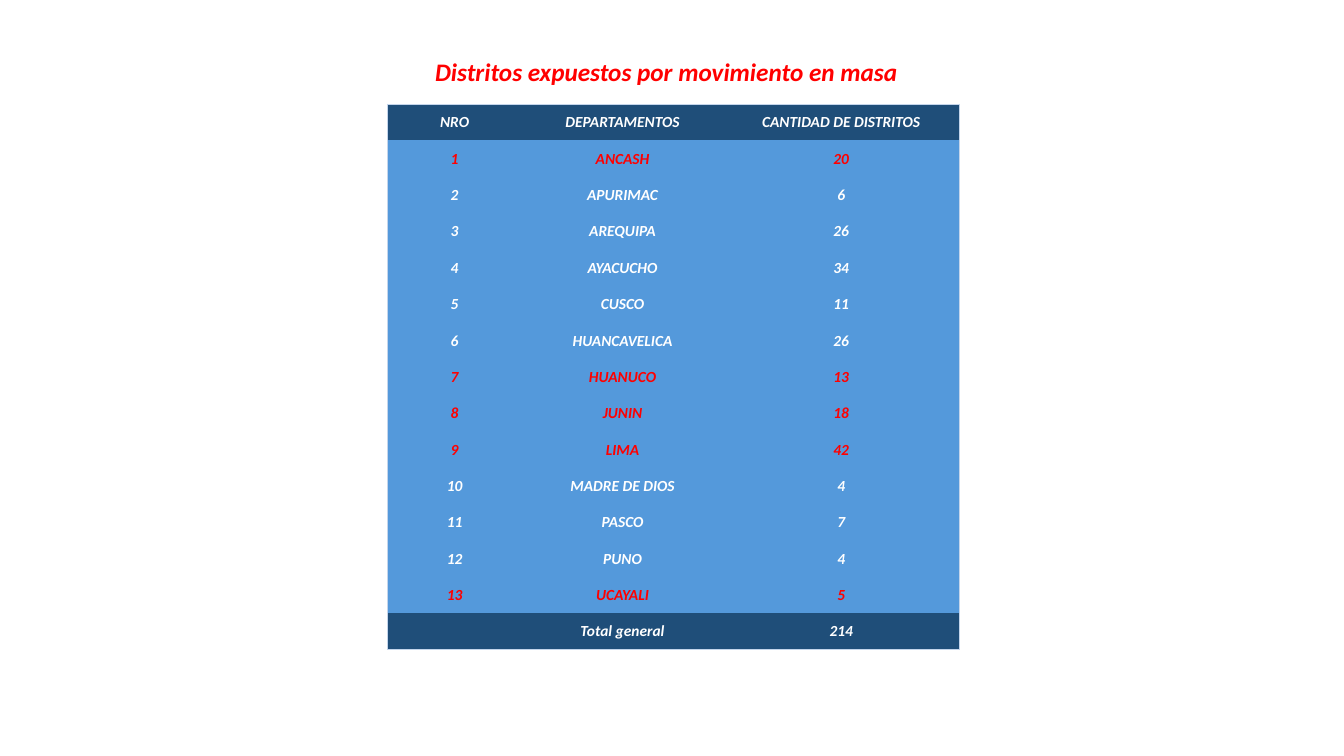
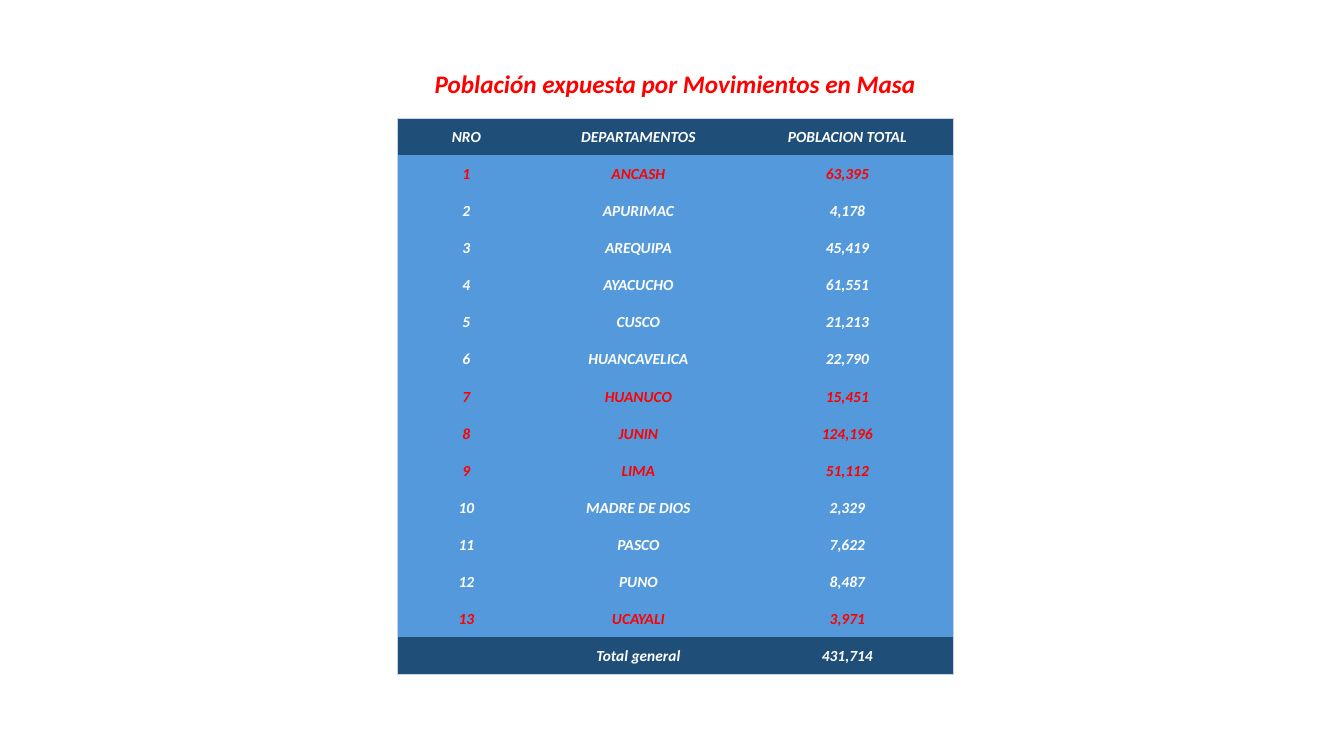
from lxml.etree import SubElement
from pptx import Presentation
from pptx.dml.color import RGBColor
from pptx.enum.text import MSO_ANCHOR, MSO_AUTO_SIZE, PP_ALIGN
from pptx.oxml.ns import qn
from pptx.util import Inches, Pt

SLIDE_WIDTH, SLIDE_HEIGHT = Inches(13.33), Inches(7.5)
FONT = "Calibri"
RED = RGBColor(0xFF, 0x00, 0x00)
WHITE = RGBColor(0xFF, 0xFF, 0xFF)
NAVY = RGBColor(0x1F, 0x4E, 0x79)
BLUE = RGBColor(0x54, 0x99, 0xDB)
FRAME = RGBColor(0xC4, 0xD5, 0xEB)

DEPARTMENTS = [
    "ANCASH", "APURIMAC", "AREQUIPA", "AYACUCHO", "CUSCO", "HUANCAVELICA", "HUANUCO",
    "JUNIN", "LIMA", "MADRE DE DIOS", "PASCO", "PUNO", "UCAYALI",
]
HIGHLIGHTED = {"ANCASH", "HUANUCO", "JUNIN", "LIMA", "UCAYALI"}

# Positions and sizes are percentages of the slide's width or height.
SLIDES = [
    {
        "title": "Distritos expuestos por movimiento en masa",
        "title_box": (31.2, 6.8, 36.75, 5.33),
        "table_corner": (28.8, 13.75),
        "columns": (10.05, 14.95, 17.6),
        "row": 4.81,
        "heading": "CANTIDAD DE DISTRITOS",
        "values": ["20", "6", "26", "34", "11", "26", "13", "18", "42", "4", "7", "4", "5"],
        "total": "214",
    },
    {
        "title": "Población expuesta por Movimientos en Masa",
        "title_box": (31.35, 8.4, 37.75, 5.33),
        "table_corner": (29.55, 15.6),
        "columns": (10.3, 15.3, 15.8),
        "row": 4.91,
        "heading": "POBLACION TOTAL",
        "values": ["63,395", "4,178", "45,419", "61,551", "21,213", "22,790", "15,451",
                   "124,196", "51,112", "2,329", "7,622", "8,487", "3,971"],
        "total": "431,714",
    },
]


def across(percent):
    return round(SLIDE_WIDTH * percent / 100)


def down(percent):
    return round(SLIDE_HEIGHT * percent / 100)


def write_text(text_frame, text, *, size, color, align=PP_ALIGN.CENTER):
    paragraph = text_frame.paragraphs[0]
    paragraph.alignment = align
    if not text:
        return
    run = paragraph.add_run()
    run.text = text
    font = run.font
    font.name, font.size = FONT, Pt(size)
    font.bold = font.italic = True
    font.color.rgb = color


def add_title(slide, text, box):
    left, top, width, height = box
    shape = slide.shapes.add_textbox(across(left), down(top), across(width), down(height))
    text_frame = shape.text_frame
    text_frame.word_wrap = False
    text_frame.auto_size = MSO_AUTO_SIZE.SHAPE_TO_FIT_TEXT
    write_text(text_frame, text, size=18, color=RED)


def set_borders(cell, framed_sides):
    """Draw the frame on the given sides and clear the others; call before filling."""
    properties = cell._tc.get_or_add_tcPr()
    for side in "LRTB":
        line = SubElement(properties, qn(f"a:ln{side}"), w=str(Pt(0.5)))
        if side in framed_sides:
            fill = SubElement(line, qn("a:solidFill"))
            SubElement(fill, qn("a:srgbClr"), val=str(FRAME))
        else:
            SubElement(line, qn("a:noFill"))


def format_cell(cell, text, color, fill, framed_sides):
    cell.margin_left = cell.margin_right = cell.margin_top = Inches(0.01)
    cell.margin_bottom = 0
    cell.vertical_anchor = MSO_ANCHOR.MIDDLE
    set_borders(cell, framed_sides)
    cell.fill.solid()
    cell.fill.fore_color.rgb = fill
    write_text(cell.text_frame, text, size=11, color=color)


def add_department_table(slide, corner, columns, row_height, records):
    left, top = corner
    last_row, last_column = len(records) - 1, len(columns) - 1
    table = slide.shapes.add_table(
        len(records), len(columns), across(left), down(top),
        across(sum(columns)), down(row_height * len(records)),
    ).table
    for column, width in zip(table.columns, columns):
        column.width = across(width)
    for row_index, record in enumerate(records):
        color = RED if record[1] in HIGHLIGHTED else WHITE
        fill = NAVY if row_index in (0, last_row) else BLUE
        for column_index, text in enumerate(record):
            edges = {"L": column_index == 0, "R": column_index == last_column,
                     "T": row_index == 0, "B": row_index == last_row}
            framed_sides = [side for side, on_edge in edges.items() if on_edge]
            format_cell(table.cell(row_index, column_index), text, color, fill, framed_sides)


def table_records(heading, values, total):
    numbers = map(str, range(1, len(DEPARTMENTS) + 1))
    return [
        ("NRO", "DEPARTAMENTOS", heading),
        *zip(numbers, DEPARTMENTS, values),
        ("", "Total general", total),
    ]


def main():
    presentation = Presentation()
    presentation.slide_width, presentation.slide_height = SLIDE_WIDTH, SLIDE_HEIGHT
    for content in SLIDES:
        slide = presentation.slides.add_slide(presentation.slide_layouts[6])
        add_title(slide, content["title"], content["title_box"])
        records = table_records(content["heading"], content["values"], content["total"])
        add_department_table(
            slide, content["table_corner"], content["columns"], content["row"], records
        )
    presentation.save("out.pptx")


if __name__ == "__main__":
    main()
